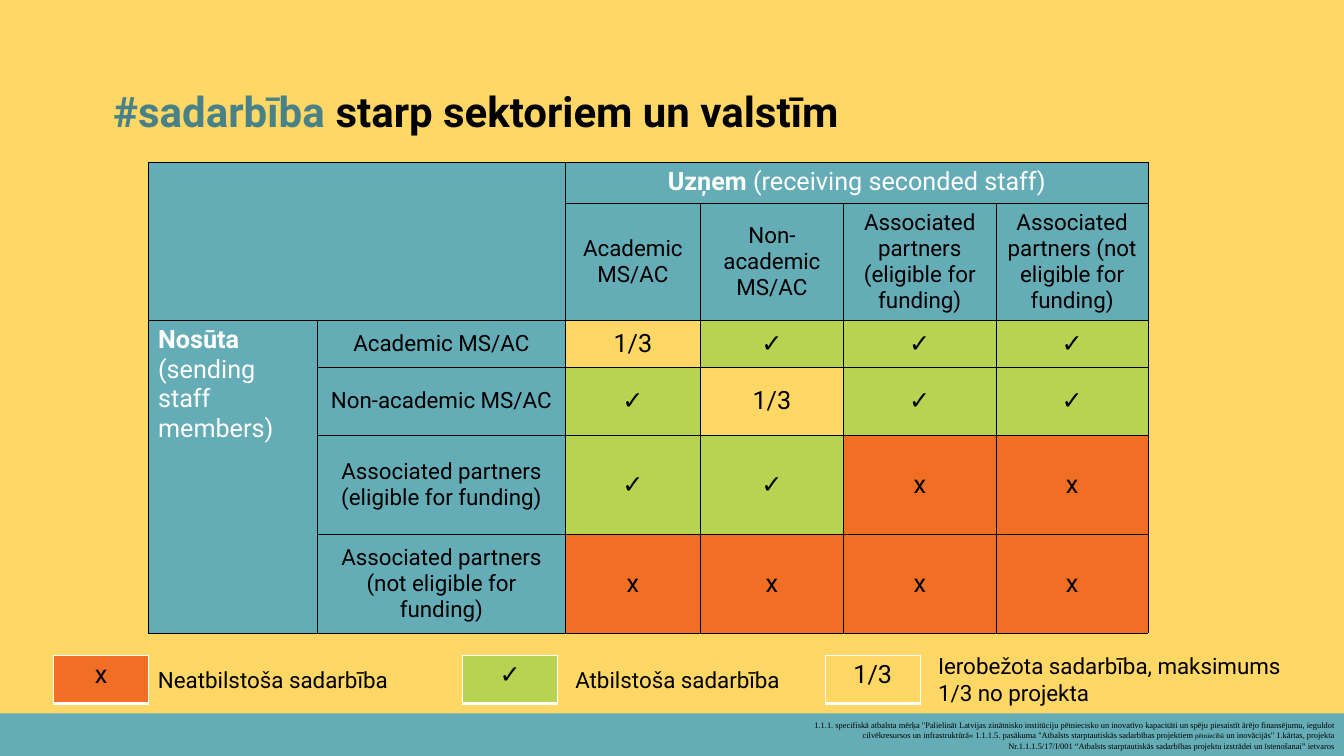
"""Build the slide on cooperation between sectors and countries."""
from lxml.etree import SubElement as Sub
from pptx import Presentation
from pptx.dml.color import RGBColor as Rgb
from pptx.enum.shapes import MSO_SHAPE as Shape
from pptx.enum.text import MSO_ANCHOR as Anchor, PP_ALIGN as Align
from pptx.oxml.ns import qn
from pptx.util import Cm, Pt

HUES = {"sand": "FFD764", "teal": "65ADB6", "deep": "488187", "lime": "B6D452",
        "rust": "F16F24", "black": "000000", "white": "FFFFFF"}
SANS, SERIF = "Roboto", "Times New Roman"
MARKS = {"x": "rust", "✓": "lime", "1/3": "sand"}

TITLE = [("#sadarbība ", 30, "deep", True), ("starp sektoriem un valstīm", 30, "black", True)]
TAKES = [("Uzņem ", 18, "white", True), ("(receiving seconded staff)", 18, "white", False)]
SENDS = [("Nosūta", 18, "white", True), (" (sending staff members)", 18, "white", False)]
NOTE = [
    ("1.1.1. specifiskā atbalsta mērķa \"Palielināt Latvijas zinātnisko institūciju pētniecisko "
     "un inovatīvo kapacitāti un spēju piesaistīt ārējo finansējumu, ieguldot cilvēkresursos un "
     "infrastruktūrā« 1.1.1.5. pasākuma \"Atbalsts starptautiskās sadarbības projektiem ",
     6, "black", False),
    ("pētniecībā", 5, "black", False),
    (" un inovācijās\" 1.kārtas, projekta Nr.1.1.1.5/17/I/001 “Atbalsts starptautiskās "
     "sadarbības projektu izstrādei un īstenošanai” ietvaros", 6, "black", False),
]
GROUPS = ["Academic MS/AC", "Non-academic MS/AC",
          "Associated partners (eligible for funding)",
          "Associated partners (not eligible for funding)"]
GRID = [["1/3", "✓", "✓", "✓"],
        ["✓", "1/3", "✓", "✓"],
        ["✓", "✓", "x", "x"],
        ["x", "x", "x", "x"]]
COLS = [4.27, 6.25, 3.4, 3.61, 3.84, 3.84]
ROWS = [1.02, 2.87, 1.17, 1.73, 2.49, 2.49]
THIN = [("black", 0.25)] * 4
THICK = [("white", 1)] * 3 + [("white", 3)]
KEYS = [("x", 1.35, "Neatbilstoša sadarbība", 3.73, 16.66, 6.76, 0.94),
        ("✓", 11.66, "Atbilstoša sadarbība", 14.25, 16.66, 6.76, 0.94),
        ("1/3", 20.8, "Ierobežota sadarbība, maksimums 1/3 no projekta", 23.39, 16.31, 9.35, 1.63)]


def rgb(hue):
    return Rgb.from_string(HUES[hue])


def write(frame, parts, align=Align.LEFT, face=SANS):
    para = frame.paragraphs[0]
    para.alignment = align
    for text, size, hue, bold in parts:
        run = para.add_run()
        run.text = text
        font = run.font
        font.name, font.size, font.bold = face, Pt(size), bold
        font.color.rgb = rgb(hue)
    return para


def label(slide, box, parts, align=Align.LEFT, face=SANS):
    frame = slide.shapes.add_textbox(*map(Cm, box)).text_frame
    frame.word_wrap = True
    write(frame, parts, align, face)


def grid(slide, left, top, cols, rows, edges):
    size = Cm(sum(cols)), Cm(sum(rows))
    table = slide.shapes.add_table(len(rows), len(cols), Cm(left), Cm(top), *size).table
    table.first_row = table.horz_banding = False
    for col, wide in zip(table.columns, cols):
        col.width = Cm(wide)
    for row, high in zip(table.rows, rows):
        row.height = Cm(high)
    for cell in table.iter_cells():
        props = cell._tc.get_or_add_tcPr()
        for side, (hue, wide) in zip("LRTB", edges):
            line = Sub(props, qn("a:ln" + side), w=str(Pt(wide)))
            Sub(Sub(line, qn("a:solidFill")), qn("a:srgbClr"), val=HUES[hue])
        paint(cell, "teal")
    return table


def paint(cell, hue):
    cell.fill.solid()
    cell.fill.fore_color.rgb = rgb(hue)


def put(cell, text, size, anchor=Anchor.MIDDLE):
    cell.vertical_anchor = anchor
    paint(cell, MARKS.get(text, "teal"))
    write(cell.text_frame, [(text, size, "black", False)], Align.CENTER)


def matrix(slide):
    table = grid(slide, 3.73, 4.09, COLS, ROWS, THIN)
    table.cell(0, 0).merge(table.cell(1, 1))
    table.cell(0, 2).merge(table.cell(0, 5))
    table.cell(2, 0).merge(table.cell(5, 0))
    write(table.cell(0, 2).text_frame, TAKES, Align.CENTER)
    write(table.cell(2, 0).text_frame, SENDS)
    for i, (group, marks) in enumerate(zip(GROUPS, GRID), 2):
        put(table.cell(1, i), group, 16)
        put(table.cell(i, 1), group, 16)
        for j, mark in enumerate(marks, 2):
            put(table.cell(i, j), mark, 18)


def main():
    deck = Presentation()
    deck.slide_width, deck.slide_height = Cm(33.87), Cm(19.05)
    slide = deck.slides.add_slide(deck.slide_layouts[5])
    slide.background.fill.solid()
    slide.background.fill.fore_color.rgb = rgb("sand")

    band = slide.shapes.add_shape(Shape.RECTANGLE, 0, Cm(17.98), deck.slide_width, Cm(1.07))
    band.shadow.inherit = False
    band.fill.solid()
    band.fill.fore_color.rgb = rgb("teal")
    band.line.fill.background()
    label(slide, (20.01, 18.03, 13.87, 1.02), NOTE, Align.RIGHT, SERIF)

    title = slide.shapes.title
    title.left, title.top, title.width, title.height = map(Cm, (2.34, 1.02, 29.21, 3.68))
    frame = title.text_frame
    frame.vertical_anchor = Anchor.MIDDLE
    frame.margin_left = Cm(0.51)
    write(frame, TITLE).line_spacing = 0.9

    matrix(slide)
    for mark, left, text, *box in KEYS:
        key = grid(slide, left, 16.51, [2.39], [1.22], THICK)
        put(key.cell(0, 0), mark, 18, Anchor.TOP)
        label(slide, box, [(text, 16, "black", False)])
    deck.save("out.pptx")


if __name__ == "__main__":
    main()
